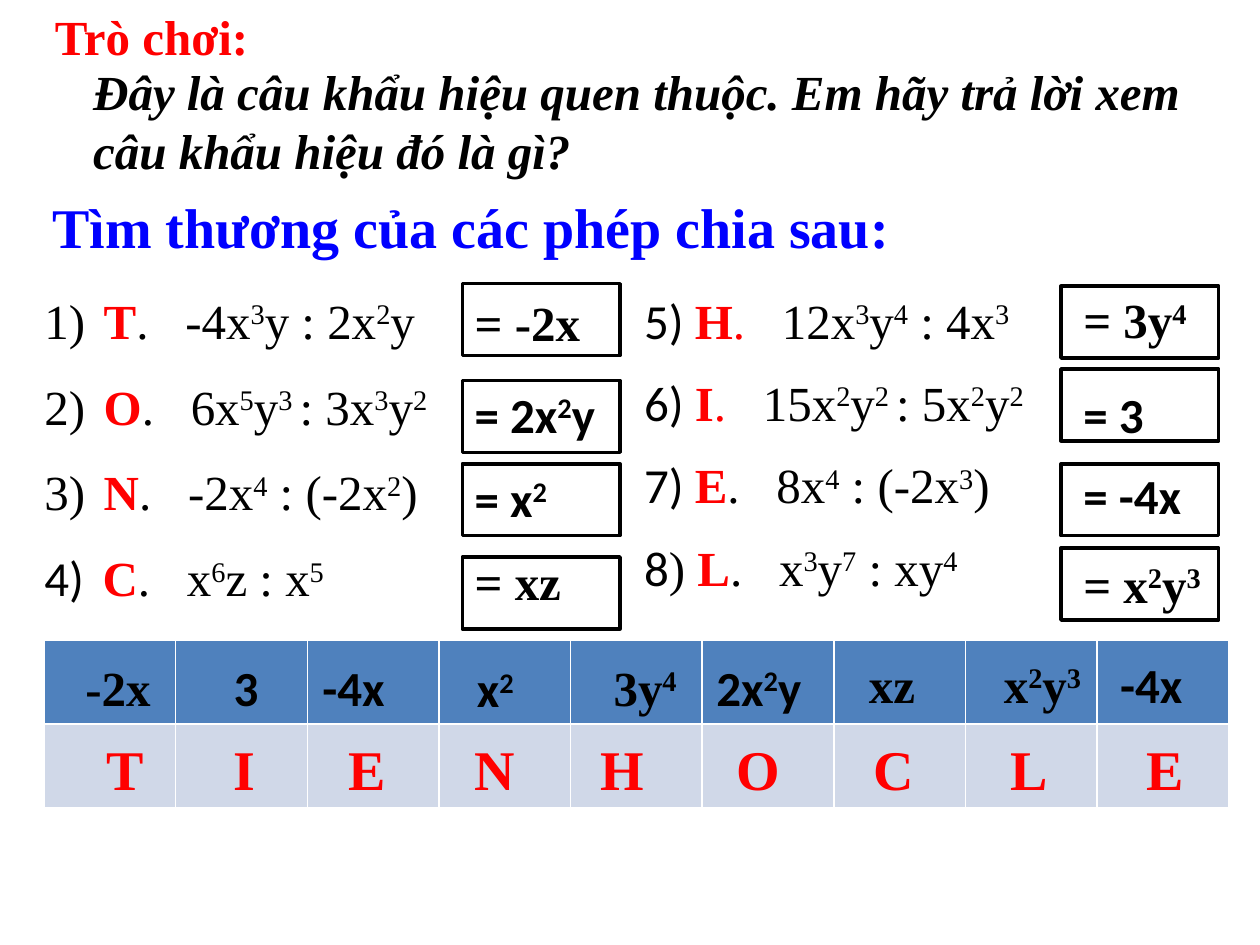
from pptx import Presentation
from pptx.dml.color import RGBColor
from pptx.enum.shapes import MSO_SHAPE as SHAPE
from pptx.enum.text import MSO_ANCHOR as ANCHOR, MSO_AUTO_SIZE as AUTO, PP_ALIGN as ALIGN
from pptx.oxml.xmlchemy import OxmlElement
from pptx.util import Cm, Pt

BLACK = RGBColor(0x00, 0x00, 0x00)
RED = RGBColor(0xFF, 0x00, 0x00)
BLUE = RGBColor(0x00, 0x00, 0xFF)
HEADER = RGBColor(0x4F, 0x81, 0xBD)
BAND = RGBColor(0xD0, 0xD8, 0xE8)
SERIF, SANS = "Times New Roman", "Calibri"

# Inline marks toggle a style: ^ superscript, * bold, # red, ~ sans, _ wide gap
MARKS = "^*#~_"

TITLE = "Trò chơi: "
QUESTION = "Đây là câu khẩu hiệu quen thuộc. Em hãy trả lời xem câu khẩu hiệu đó là gì?"
TASK = "Tìm thương của các phép chia sau:"

LEFT_ROWS = [
    " #*T*#._ _-4x^3^y : 2x^2^y",
    " #*O*#._ _6x^5^y^3 ^: 3x^3^y^2^",
    " #*N*#._ _-2x^4^ : (-2x^2^)",
    "~ ~#*C*#._ _x^6^z : x^5^",
]
RIGHT_ROWS = [
    "~5) ~#*H*._ _#12x^3^y^4^ : 4x^3^",
    "~6) ~#*I*._ _#15x^2^y^2 ^: 5x^2^y^2^",
    "~7) ~#*E*#._ _8x^4^ : (-2x^3^)",
    "~8~) #*L*#._ _x^3^y^7^ : xy^4^",
]

RESULTS = [
    ("= -2x", 9.32, 5.77), ("~= 2x^2^y", 9.32, 7.62),
    ("~= x^2^", 9.32, 9.32), ("= xz", 9.32, 11),
    ("= 3y^4^", 21.59, 5.72), ("~= 3", 21.59, 7.62),
    ("~= -4x", 21.59, 9.25), ("= x^2^y^3^", 21.59, 11.05),
]
FRAMES = [(9.32, (5.72, 7.67, 9.35, 11.23)), (21.39, (5.77, 7.44, 9.35, 11.05))]

SLOGAN = [
    ("-2x", 1.47, 13.13, 2.01, "T", 1.9),
    ("~ 3", 4.24, 13.13, 2.01, "I", 4.45),
    ("~-4x", 6.25, 13.13, 1.8, "E", 6.78),
    ("~ x^2^", 9.14, 13.16, 2.18, "N", 9.32),
    ("3y^4^", 12.12, 13.13, 2.08, "H", 11.86),
    ("~ 2x^2^y", 13.97, 13.13, 2.74, "O", 14.6),
    (" xz", 17.02, 13.06, 3.61, "C", 17.35),
    (" x^2^y^3^", 19.74, 13.06, 3.61, "L", 20.12),
    ("~-4x", 22.33, 13.06, 2.01, "E", 22.86),
]


def split_marks(text):
    on, part = set(), ""
    for ch in text:
        if ch in MARKS:
            if part:
                yield part, frozenset(on)
            on ^= {ch}
            part = ""
        else:
            part += ch
    if part:
        yield part, frozenset(on)


def write(p, text, size=28, color=BLACK, bold=False, italic=False):
    for part, on in split_marks(text):
        r = p.add_run()
        r.text = part
        r.font.size = Pt(size)
        r.font.name = SANS if "~" in on else SERIF
        r.font.color.rgb = RED if "#" in on else color
        r.font.bold = bold or "*" in on
        r.font.italic = italic
        rPr = r._r.get_or_add_rPr()
        if "^" in on:
            rPr.set("baseline", "30000")
        if "_" in on:
            rPr.set("spc", "1400")


def place(sp, x, y, w, h):
    sp.left, sp.top, sp.width, sp.height = Cm(x), Cm(y), Cm(w), Cm(h)


def add_text(slide, text, x, y, w, h=1.45, **style):
    sp = slide.shapes.add_textbox(Cm(x), Cm(y), Cm(w), Cm(h))
    tf = sp.text_frame
    tf.word_wrap = True
    tf.auto_size = AUTO.SHAPE_TO_FIT_TEXT
    write(tf.paragraphs[0], text, **style)


def fill_list(sp, rows, x, gap, numbered):
    place(sp, x, 5.72, 10.16, 6.78)
    tf = sp.text_frame
    tf.auto_size = AUTO.NONE
    tf.vertical_anchor = ANCHOR.TOP
    for i, row in enumerate(rows):
        p = tf.paragraphs[0] if i == 0 else tf.add_paragraph()
        p.space_before = Pt(gap if i else 0)
        pPr = p._p.get_or_add_pPr()
        pPr.set("marL", str(Cm(0.95)))
        pPr.set("indent", str(Cm(-0.95)))
        bullet = OxmlElement("a:buAutoNum" if numbered else "a:buNone")
        if numbered:
            bullet.set("type", "arabicParenR")
        pPr.append(bullet)
        write(p, row)


def main():
    prs = Presentation()
    prs.slide_width, prs.slide_height = Cm(25.4), Cm(19.05)
    slide = prs.slides.add_slide(prs.slide_layouts[3])
    title, left, right = list(slide.placeholders)[:3]

    table = slide.shapes.add_table(2, len(SLOGAN), Cm(0.89), Cm(12.9), Cm(23.88), Cm(3.38)).table
    for row, color in zip(table.rows, (HEADER, BAND)):
        for cell in row.cells:
            cell.fill.solid()
            cell.fill.fore_color.rgb = color

    place(title, 0.64, -0.2, 5.08, 1.83)
    title.text_frame.vertical_anchor = ANCHOR.MIDDLE
    p = title.text_frame.paragraphs[0]
    p.alignment = ALIGN.CENTER
    write(p, TITLE, color=RED, bold=True)
    fill_list(left, LEFT_ROWS, 0.64, 15.5, True)
    fill_list(right, RIGHT_ROWS, 12.73, 13.5, False)

    add_text(slide, QUESTION, 1.63, 1.12, 22.86, 2.64, bold=True, italic=True)
    add_text(slide, TASK, 0.81, 3.76, 22.02, 1.63, size=32, color=BLUE, bold=True)
    for text, x, y in RESULTS:
        add_text(slide, text, x, y, 3.61, bold=True)
    for text, x, y, w, letter, letter_x in SLOGAN:
        add_text(slide, text, x, y, w, bold=True)
        add_text(slide, letter, letter_x, 14.68, 1.27, 1.63, size=32, color=RED, bold=True)

    for x, tops in FRAMES:
        for y in tops:
            sp = slide.shapes.add_shape(SHAPE.RECTANGLE, Cm(x), Cm(y), Cm(3.18), Cm(1.45))
            sp.shadow.inherit = False
            sp.fill.background()
            sp.line.color.rgb = BLACK
            sp.line.width = Pt(2)

    prs.save("out.pptx")


if __name__ == "__main__":
    main()
